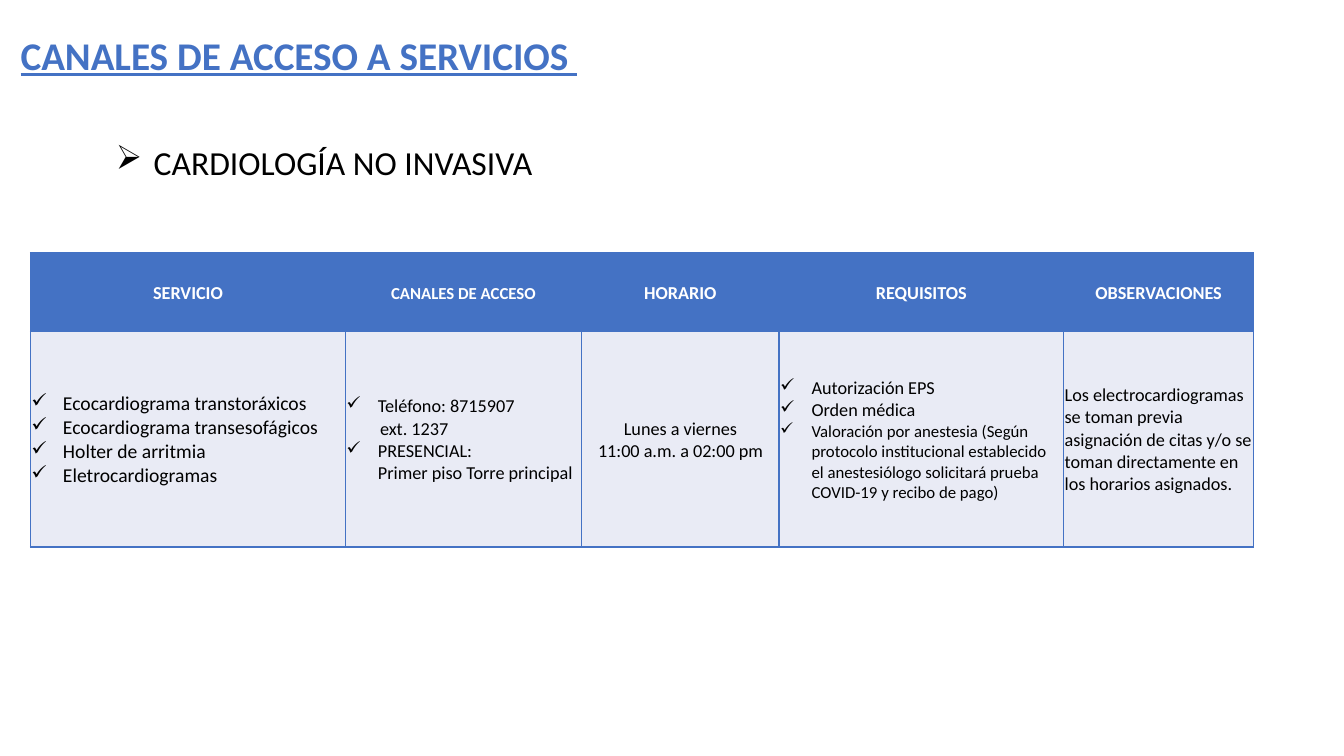
from lxml.etree import SubElement
from pptx import Presentation
from pptx.dml.color import RGBColor
from pptx.enum.text import MSO_ANCHOR as Anchor, MSO_AUTO_SIZE as AutoSize, PP_ALIGN as Align
from pptx.oxml.ns import qn
from pptx.util import Pt

PX = 9525
COLORS = {"blue": "4472C4", "pale": "E9EBF5", "white": "FFFFFF", "black": "000000"}


def add_run(paragraph, text, size, color, bold=False):
    for index, line in enumerate(text.split("\n")):
        if index:
            paragraph.add_line_break()
        run = paragraph.add_run()
        run.text = line
        run.font.name = "Calibri"
        run.font.size = Pt(size)
        run.font.bold = bold
        run.font.color.rgb = RGBColor.from_string(COLORS[color])
    return run


def set_bullet(paragraph, mark, indent):
    properties = paragraph._p.get_or_add_pPr()
    properties.set("marL", str(indent * PX))
    if mark:
        properties.set("indent", str(-indent * PX))
        SubElement(properties, qn("a:buChar"), char=mark)


presentation = Presentation()
presentation.slide_width = 1280 * PX
presentation.slide_height = 720 * PX
slide = presentation.slides.add_slide(presentation.slide_layouts[5])

title = slide.shapes.title
title.left, title.top, title.width, title.height = [n * PX for n in (10, 20, 878, 60)]
title.text_frame.auto_size = AutoSize.NONE
title.text_frame.vertical_anchor = Anchor.BOTTOM
paragraph = title.text_frame.paragraphs[0]
paragraph.alignment = Align.LEFT
paragraph.line_spacing = 0.9
add_run(paragraph, "CANALES DE ACCESO A SERVICIOS ", 28, "blue", True).font.underline = True

subtitle = slide.shapes.add_textbox(*[n * PX for n in (101, 130, 501, 48)])
subtitle.text_frame.word_wrap = True
subtitle.text_frame.auto_size = AutoSize.SHAPE_TO_FIT_TEXT
paragraph = subtitle.text_frame.paragraphs[0]
set_bullet(paragraph, "➢", 36)
add_run(paragraph, "CARDIOLOGÍA NO INVASIVA", 24, "black")

headers = [("SERVICIO", 13), ("CANALES DE ACCESO", 12), ("HORARIO", 13),
           ("REQUISITOS", 13), ("OBSERVACIONES", 13)]
details = [
    [("✓", 30, "Ecocardiograma transtoráxicos", 14),
     ("✓", 30, "Ecocardiograma transesofágicos", 14),
     ("✓", 30, "Holter de arritmia", 14),
     ("✓", 30, "Eletrocardiogramas", 14)],
    [("✓", 30, "Teléfono: 8715907", 13),
     ("", 32, "ext. 1237", 13),
     ("✓", 30, "PRESENCIAL:\nPrimer piso Torre principal", 13)],
    [("", 0, "Lunes a viernes\n11:00 a.m. a 02:00 pm", 13)],
    [("✓", 30, "Autorización EPS", 13),
     ("✓", 30, "Orden médica", 13),
     ("✓", 30, "Valoración por anestesia (Según protocolo institucional establecido "
               "el anestesiólogo solicitará prueba COVID-19 y recibo de pago)", 12)],
    [("", 0, "Los electrocardiogramas se toman previa asignación de citas y/o se "
             "toman directamente en los horarios asignados.", 13)],
]
rows = [[[("", 0, text, size)] for text, size in headers], details]
widths = [300, 225, 188, 271, 181]
heights = [75, 205]

table = slide.shapes.add_table(len(rows), len(widths), 29 * PX, 241 * PX,
                               sum(widths) * PX, sum(heights) * PX).table
table.horz_banding = False
for column, width in zip(table.columns, widths):
    column.width = width * PX
for row, height in zip(table.rows, heights):
    row.height = height * PX

for row_index, row in enumerate(rows):
    is_header = row_index == 0
    for column_index, entries in enumerate(row):
        cell = table.cell(row_index, column_index)
        cell.vertical_anchor = Anchor.MIDDLE
        cell.margin_left = cell.margin_top = cell.margin_right = PX
        cell.margin_bottom = 0
        for index, (mark, indent, text, size) in enumerate(entries):
            frame = cell.text_frame
            paragraph = frame.add_paragraph() if index else frame.paragraphs[0]
            centered = is_header or column_index == 2
            paragraph.alignment = Align.CENTER if centered else Align.LEFT
            set_bullet(paragraph, mark, indent)
            add_run(paragraph, text, size, "white" if is_header else "black", is_header)
        if is_header and column_index == 1:
            paragraph.line_spacing = 1.07
            paragraph.space_after = Pt(8)
        properties = cell._tc.get_or_add_tcPr()
        for side in ("lnL", "lnR", "lnT", "lnB"):
            border = SubElement(properties, qn(f"a:{side}"), w=str(Pt(1)))
            SubElement(SubElement(border, qn("a:solidFill")), qn("a:srgbClr"), val=COLORS["blue"])
        cell.fill.solid()
        cell.fill.fore_color.rgb = RGBColor.from_string(COLORS["blue" if is_header else "pale"])

presentation.save("out.pptx")
